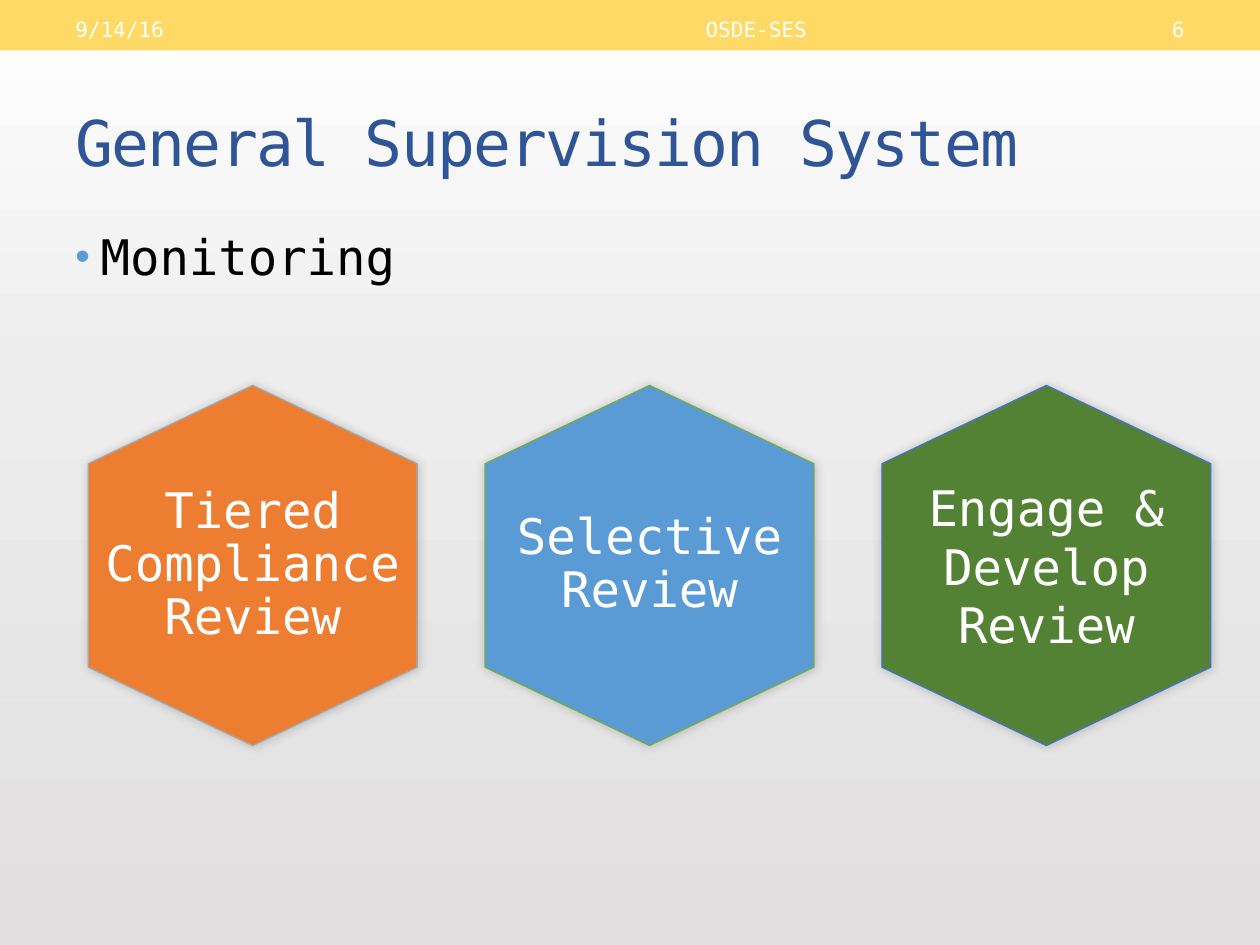
import pptx
import pptx.util
import pptx.dml.color
import pptx.enum.shapes
import pptx.enum.text
import pptx.oxml
import pptx.oxml.ns
from dataclasses import dataclass

Cm = pptx.util.Cm
Pt = pptx.util.Pt
Align = pptx.enum.text.PP_ALIGN
Anchor = pptx.enum.text.MSO_ANCHOR
NS = pptx.oxml.ns.nsdecls("a")


@dataclass(frozen=True)
class Theme:
    font: str = "DejaVu Sans Mono"
    white: str = "FFFFFF"
    black: str = "000000"
    band: str = "FFD966"
    title: str = "2F5597"
    orange: str = "ED7D31"
    gray: str = "A5A5A5"
    blue: str = "5B9BD5"
    lime: str = "70AD47"
    green: str = "548235"
    navy: str = "4472C4"
    back: tuple = ((0, "FFFFFF"), (40, "EDEDED"), (100, "E1DFDF"))
    small: int = 12
    large: int = 28
    head: int = 36


T = Theme()


def rgb(code):
    return pptx.dml.color.RGBColor.from_string(code)


def xml(text):
    return pptx.oxml.parse_xml(text)


def write(frame, text, size=T.large, color=T.white, align=Align.LEFT,
          anchor=Anchor.TOP, inset=None, lead=None, before=0, after=0,
          track=0):
    """Fill a text frame with one formatted paragraph."""
    frame.word_wrap = True
    frame.vertical_anchor = anchor
    if inset:
        frame.margin_left = frame.margin_right = Cm(inset[0])
        frame.margin_top = frame.margin_bottom = Cm(inset[1])
    para = frame.paragraphs[0]
    para.alignment = align
    para.line_spacing = lead
    para.space_before = Pt(before)
    para.space_after = Pt(after)
    run = para.add_run()
    run.text = text
    run.font.name = T.font
    run.font.size = Pt(size)
    run.font.color.rgb = rgb(color)
    if track:
        run.font._element.set("spc", str(track * 100))
    return para


def label(slide, box, text, **form):
    area = slide.shapes.add_textbox(*map(Cm, box))
    return write(area.text_frame, text, **form)


def bullet(para, color):
    props = para._p.get_or_add_pPr()
    props.set("marL", str(Cm(0.51)))
    props.set("indent", str(Cm(-0.51)))
    for part in (f'<a:buClr {NS}><a:srgbClr val="{color}"/></a:buClr>',
                 f'<a:buSzPct {NS} val="85000"/>',
                 f'<a:buFont {NS} typeface="Arial"/>',
                 f'<a:buChar {NS} char="•"/>'):
        props.append(xml(part))


def band(slide, top, high, color):
    kind = pptx.enum.shapes.MSO_SHAPE.RECTANGLE
    bar = slide.shapes.add_shape(kind, 0, Cm(top), Cm(25.4), Cm(high))
    bar.shadow.inherit = False
    bar.fill.solid()
    bar.fill.fore_color.rgb = rgb(color)
    bar.line.fill.background()


def paint(slide):
    """Give the slide its vertical gradient."""
    fill = slide.background.fill
    fill.gradient()
    grad = slide.background._cSld.find(".//" + pptx.oxml.ns.qn("a:gradFill"))
    for child in list(grad):
        grad.remove(child)
    stops = "".join(f'<a:gs pos="{pos * 1000}"><a:srgbClr val="{color}"/></a:gs>'
                    for pos, color in T.back)
    grad.append(xml(f"<a:gsLst {NS}>{stops}</a:gsLst>"))
    grad.append(xml(f'<a:lin {NS} ang="5400000" scaled="0"/>'))


def hexa(group, left, text, fill, edge, lead):
    top, wide, high, cut = 7.77, 6.63, 7.26, 1.58
    mid, right, base = left + wide / 2, left + wide, top + high
    dots = [(mid, top), (right, top + cut), (right, base - cut),
            (mid, base), (left, base - cut), (left, top + cut)]
    start, *rest = [(Cm(x), Cm(y)) for x, y in dots]
    path = group.shapes.build_freeform(*start)
    path.add_line_segments(rest, close=True)
    shape = path.convert_to_shape()
    shape.fill.solid()
    shape.fill.fore_color.rgb = rgb(fill)
    shape.line.color.rgb = rgb(edge)
    shape.line.width = Pt(0.75)
    # Soft shadow around the outline
    shape.shadow.inherit = False
    glow = shape._element.spPr.find(pptx.oxml.ns.qn("a:effectLst"))
    glow.append(xml(
        f'<a:outerShdw {NS} blurRad="{Pt(6)}" dist="0" dir="13500000">'
        f'<a:srgbClr val="{T.black}"><a:alpha val="20000"/></a:srgbClr>'
        '</a:outerShdw>'))
    write(shape.text_frame, text, align=Align.CENTER, anchor=Anchor.MIDDLE,
          inset=(0.32, 0.38), lead=lead, after=9.8)


def main():
    deck = pptx.Presentation()
    deck.slide_width, deck.slide_height = Cm(25.4), Cm(19.05)
    slide = deck.slides.add_slide(deck.slide_layouts[6])

    # Background and top bands
    paint(slide)
    band(slide, 0.61, 0.64, T.white)
    band(slide, 0, 1.02, T.band)

    # Title and bullet
    label(slide, (1.27, 1.47, 22.86, 2.74), "General Supervision System",
          size=T.head, color=T.title, anchor=Anchor.MIDDLE, track=-1)
    item = label(slide, (1.27, 4.45, 22.86, 13.54), "Monitoring",
                 color=T.black, before=2)
    bullet(item, T.blue)

    # Date, owner and page number
    for left, wide, text, align in (
            (1.27, 8.05, "9/14/16", Align.LEFT),
            (9.53, 11.43, "OSDE-SES", Align.CENTER),
            (21.16, 2.97, "6", Align.RIGHT)):
        label(slide, (left, 0.05, wide, 0.91), text, size=T.small,
              align=align, anchor=Anchor.BOTTOM)

    # Three kinds of review
    group = slide.shapes.add_group_shape()
    kinds = (("Tiered Compliance Review", T.orange, T.gray, 0.9),
             ("Selective Review", T.blue, T.lime, 0.9),
             ("Engage & Develop Review", T.green, T.navy, 1.0))
    for num, kind in enumerate(kinds):
        hexa(group, 1.78 + 8 * num, *kind)

    deck.save("out.pptx")


if __name__ == "__main__":
    main()
